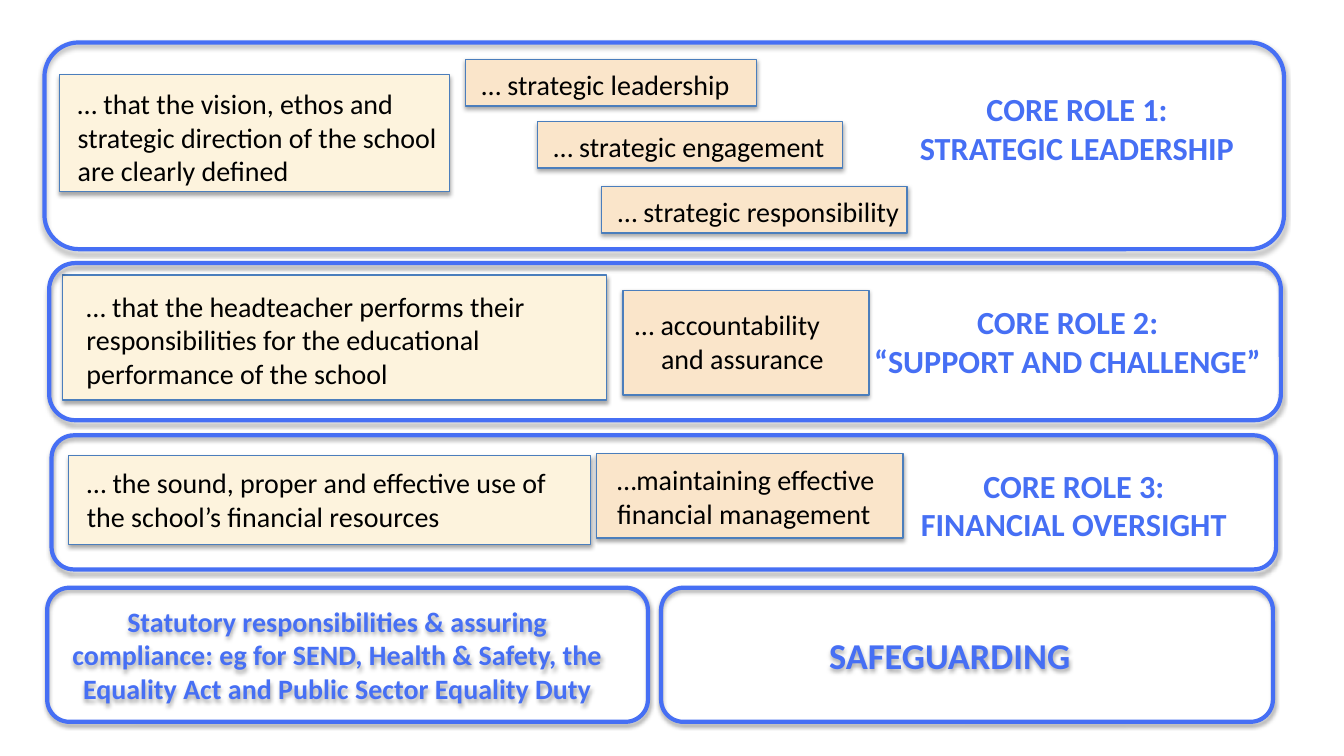
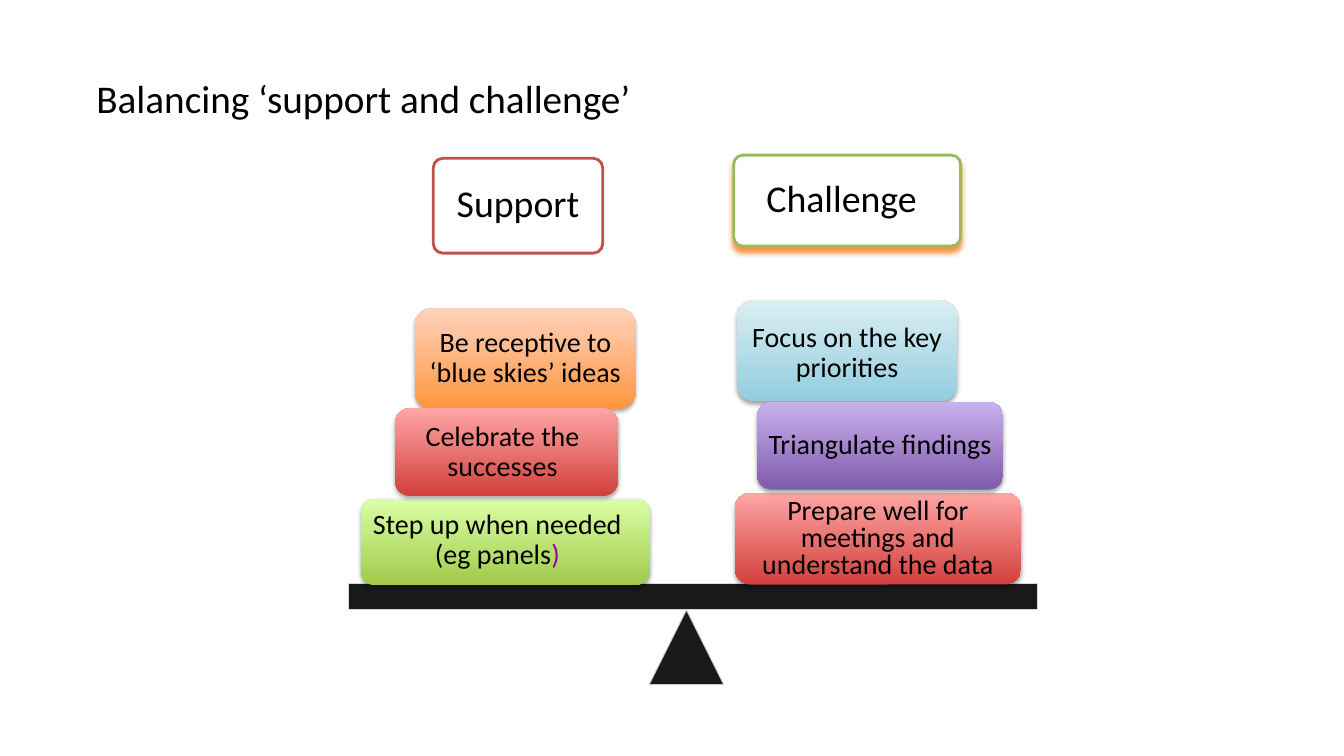
from dataclasses import dataclass

from lxml import etree
from pptx import Presentation
from pptx.dml.color import RGBColor
from pptx.enum.shapes import MSO_SHAPE
from pptx.enum.text import MSO_ANCHOR, MSO_AUTO_SIZE, PP_ALIGN
from pptx.oxml.ns import qn
from pptx.util import Cm, Pt

RECT, ROUND = MSO_SHAPE.RECTANGLE, MSO_SHAPE.ROUNDED_RECTANGLE
TRIANGLE = MSO_SHAPE.ISOSCELES_TRIANGLE
TOP, MIDDLE = MSO_ANCHOR.TOP, MSO_ANCHOR.MIDDLE
LEFT, CENTER = PP_ALIGN.LEFT, PP_ALIGN.CENTER
TITLE_ONLY, BLANK = 5, 6


@dataclass(frozen=True)
class Theme:
    font: str = "Calibri"
    # Colours
    text: str = "000000"
    white: str = "FFFFFF"
    role: str = "466FF4"
    card_line: str = "4B7EBC"
    cream: str = "FDF3DD"
    peach: str = "FAE5CA"
    support: str = "C0504D"
    challenge: str = "9BBB59"
    glow: str = "F79646"
    accent: str = "990099"
    beam_line: str = "CBDEE5"
    pivot_line: str = "D3CEDB"
    # Gradients, bottom to top
    blue: tuple = ("93CDDD", "DBEEF4")
    purple: tuple = ("7F5BAB", "C8B0ED")
    red: tuple = ("D1403C", "FFA6A5")
    orange: tuple = ("FF953E", "FFD2BD")
    green: tuple = ("A0CA4A", "DAFFA5")
    # Type sizes
    body: int = 20
    caption: int = 23
    strong: int = 26
    header: int = 27
    title: int = 28


def rgb(value):
    return RGBColor.from_string(value)


class Deck:
    def __init__(self, theme):
        self.theme = theme
        self.prs = Presentation()
        self.prs.slide_width, self.prs.slide_height = Cm(33.87), Cm(19.05)
        self.slide = None

    def new_slide(self, layout):
        self.slide = self.prs.slides.add_slide(self.prs.slide_layouts[layout])

    def title(self, text, box):
        sp = self.slide.shapes.title
        sp.left, sp.top, sp.width, sp.height = map(Cm, box)
        self.set_text(sp, text, self.theme.title, align=LEFT, pad=(0.25, 0.13, 0.25, 0.13))

    def set_text(self, sp, text, size, color=None, bold=False, align=CENTER,
                 anchor=MIDDLE, pad=(0.1, 0, 0.1, 0), spacing=None):
        tf = sp.text_frame
        tf.text = text
        tf.word_wrap = True
        tf.auto_size = MSO_AUTO_SIZE.NONE
        tf.vertical_anchor = anchor
        (tf.margin_left, tf.margin_top,
         tf.margin_right, tf.margin_bottom) = map(Cm, pad)
        for p in tf.paragraphs:
            p.alignment = align
            p.line_spacing = spacing
            p.font.name, p.font.size, p.font.bold = self.theme.font, Pt(size), bold
            p.font.color.rgb = rgb(color or self.theme.text)
        return tf.paragraphs[0]

    def shape(self, kind, box, fill=None, line=None, width=1.0):
        sp = self.slide.shapes.add_shape(kind, *map(Cm, box))
        sp.shadow.inherit = False
        if fill is None:
            sp.fill.background()
        elif isinstance(fill, tuple):
            sp.fill.gradient()
            sp.fill.gradient_angle = 90
            for stop, color in zip(sp.fill.gradient_stops, fill):
                stop.color.rgb = rgb(color)
        else:
            sp.fill.solid()
            sp.fill.fore_color.rgb = rgb(fill)
        if line:
            sp.line.color.rgb = rgb(line)
            sp.line.width = Pt(width)
        else:
            sp.line.fill.background()
        return sp

    def shadow(self, sp, color="000000", alpha=35, blur=3.1, dist=1.8):
        effects = sp._element.spPr.find(qn("a:effectLst"))
        outer = etree.SubElement(effects, qn("a:outerShdw"), blurRad=str(Pt(blur)),
                                 dist=str(Pt(dist)), dir="5400000", rotWithShape="0")
        clr = etree.SubElement(outer, qn("a:srgbClr"), val=color)
        etree.SubElement(clr, qn("a:alpha"), val=str(alpha * 1000))

    def card(self, text, box, fill, pad):
        sp = self.shape(RECT, box, fill, self.theme.card_line)
        self.shadow(sp)
        return self.set_text(sp, text, self.theme.body, align=LEFT, anchor=TOP, pad=pad)

    def panel(self, box):
        sp = self.shape(ROUND, box, line=self.theme.role, width=3)
        self.shadow(sp)
        return sp

    def caption(self, text, box):
        sp = self.slide.shapes.add_textbox(*map(Cm, box))
        self.set_text(sp, text, self.theme.caption, self.theme.role, True,
                      anchor=TOP, pad=(0.25, 0.13, 0.25, 0.13))

    def header(self, text, box, line, pad):
        sp = self.shape(ROUND, box, self.theme.white, line, 2)
        sp.adjustments[0] = 0.1
        self.set_text(sp, text, self.theme.header, pad=pad, spacing=0.9)
        return sp

    def block(self, text, box, fill, pad=(0.1, 0, 0.1, 0), spacing=0.9):
        sp = self.shape(ROUND, box, fill)
        self.shadow(sp)
        return self.set_text(sp, text, self.theme.body, pad=pad, spacing=spacing)

    def dark(self, kind, box, line):
        sp = self.shape(kind, box, self.theme.text, line, 0.75)
        clr = sp._element.spPr.find(qn("a:solidFill"))[0]
        etree.SubElement(clr, qn("a:alpha"), val="90000")


def core_roles(deck):
    th = deck.theme
    deck.new_slide(BLANK)

    # What governors ensure
    for text, box, pad in (
        ("… that the vision, ethos and strategic direction of the school are clearly defined",
         (1.5, 1.88, 9.83, 2.95), (0.46, 0.3, 0.1, 0)),
        ("… that the headteacher performs their responsibilities for the educational "
         "performance of the school",
         (1.57, 6.93, 13.72, 3.15), (0.61, 0.36, 0.46, 0)),
        ("… the sound, proper and effective use of the school’s financial resources",
         (1.73, 11.48, 13.16, 2.24), (0.46, 0.25, 0.46, 0)),
    ):
        deck.card(text, box, th.cream, pad)

    # How they do it
    for text, x, y, w in (
        ("… strategic leadership", 11.73, 1.5, 7.34),
        ("… strategic engagement", 13.54, 3.07, 7.7),
        ("… strategic responsibility", 15.16, 4.7, 7.7),
    ):
        deck.card(text, (x, y, w, 1.17), th.peach, (0.41, 0.2, 0, 0))
    p = deck.card("… accountability\vand assurance", (15.7, 7.32, 6.2, 2.64),
                  th.peach, (0.3, 0.43, 0, 0))
    pPr = p._p.get_or_add_pPr()
    pPr.set("marL", str(Cm(0.66)))
    pPr.set("indent", str(-Cm(0.66)))
    deck.card("…maintaining effective financial management",
              (15.04, 11.43, 7.72, 2.13), th.peach, (0.51, 0.23, 0.1, 0))

    # Role panels and their captions
    for box in ((1.12, 1.07, 31.24, 5.21), (1.24, 6.63, 31.04, 3.96),
                (1.3, 10.97, 30.86, 3.38)):
        deck.panel(box)
    for text, x, y, w in (
        ("CORE ROLE 1:\vSTRATEGIC LEADERSHIP", 22.89, 2.13, 8.51),
        ("CORE ROLE 2:\n“SUPPORT AND CHALLENGE”", 21.36, 7.49, 11.1),
        ("CORE ROLE 3: FINANCIAL OVERSIGHT", 22.76, 11.61, 8.61),
    ):
        deck.caption(text, (x, y, w, 2.24))

    # Duties that run across all roles
    for text, x, w, size, pad in (
        ("Statutory responsibilities & assuring compliance: eg for SEND, Health & Safety, "
         "the Equality Act and Public Sector Equality Duty",
         1.19, 15.14, th.body, (0.28, 0, 0.8, 0)),
        ("SAFEGUARDING", 16.66, 15.42, th.strong, (0, 0, 0.86, 0)),
    ):
        sp = deck.panel((x, 14.81, w, 3.38))
        deck.set_text(sp, text, size, th.role, True, pad=pad)


def balance(deck):
    th = deck.theme
    deck.new_slide(TITLE_ONLY)
    deck.title("Balancing ‘support and challenge’", (2.18, 0.99, 28.19, 2.97))

    # Headers of the two sides
    deck.header("Support", (10.92, 3.99, 4.27, 2.39), th.support, (0.1, 0, 0.1, 0))
    sp = deck.header("Challenge", (18.49, 3.91, 5.72, 2.29), th.challenge, (0, 0, 0.28, 0))
    deck.shadow(sp, th.glow, 100, 4, 4)

    # Scales
    deck.dark(TRIANGLE, (16.36, 15.37, 1.88, 1.88), th.pivot_line)
    deck.dark(RECT, (8.79, 14.71, 17.35, 0.66), th.beam_line)

    # Challenge blocks
    deck.block("Focus on the key priorities", (18.57, 7.57, 5.56, 2.54), th.blue,
               (0.1, 0.15, 0.1, 0))
    deck.block("Prepare well for meetings and understand the data",
               (18.52, 12.42, 7.21, 2.31), th.red, (0.3, 0.05, 0.3, 0), 0.8)
    deck.block("Triangulate findings", (19.08, 10.13, 6.2, 2.21), th.purple)

    # Support blocks
    deck.block("Be receptive to ‘blue skies’ ideas", (10.46, 7.77, 5.56, 2.54), th.orange)
    p = deck.block("Step up when needed (eg panels", (9.09, 12.57, 7.29, 2.18), th.green,
                   (0, 0, 0.4, 0.1))
    r = p.add_run()
    r.text = ")"
    r.font.color.rgb = rgb(th.accent)
    deck.block("Celebrate the successes", (9.96, 10.29, 5.61, 2.21), th.red,
               (0.1, 0, 0.3, 0))


def main():
    deck = Deck(Theme())
    core_roles(deck)
    balance(deck)
    deck.prs.save("out.pptx")


if __name__ == "__main__":
    main()
